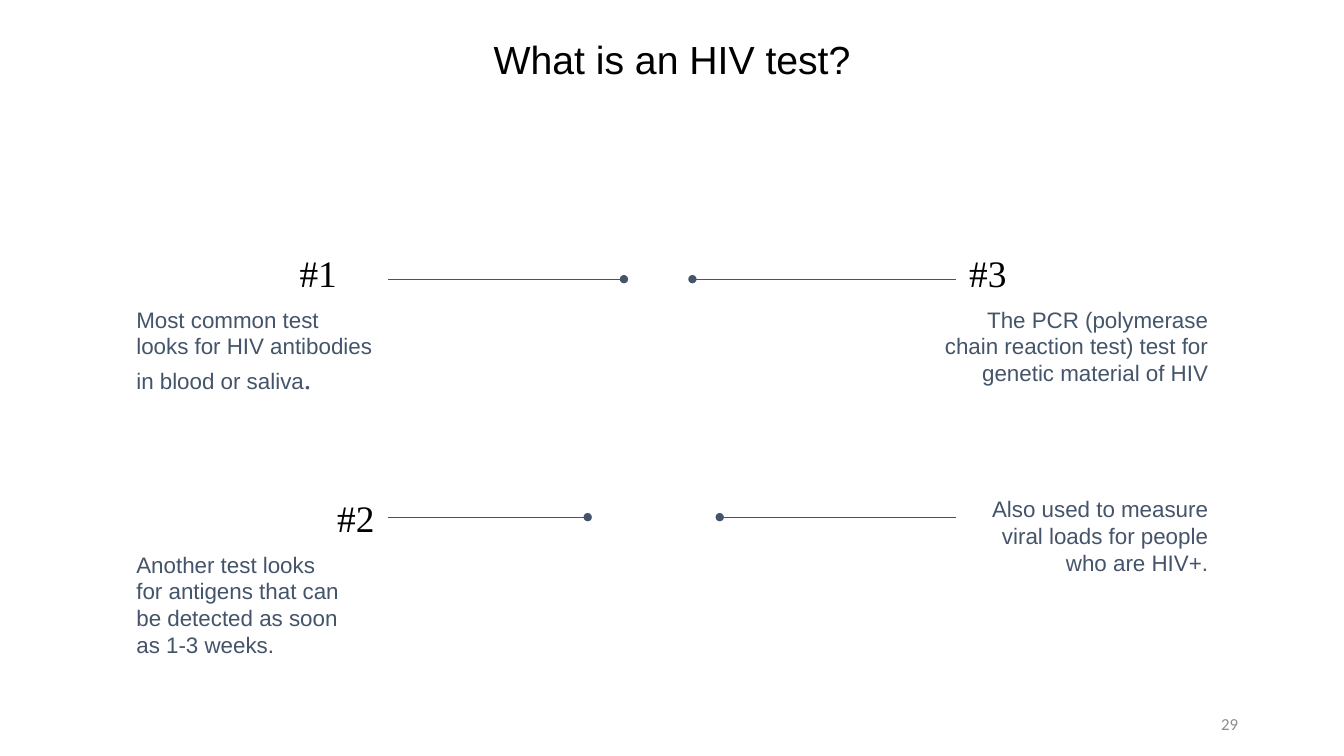
from lxml import etree
from pptx import Presentation
from pptx.dml.color import RGBColor
from pptx.enum.shapes import MSO_CONNECTOR
from pptx.enum.text import MSO_ANCHOR, MSO_AUTO_SIZE, PP_ALIGN
from pptx.oxml.ns import qn
from pptx.util import Pt

LEFT, CENTER, RIGHT = PP_ALIGN.LEFT, PP_ALIGN.CENTER, PP_ALIGN.RIGHT
TOP, MIDDLE = MSO_ANCHOR.TOP, MSO_ANCHOR.MIDDLE
NO_FIT = MSO_AUTO_SIZE.NONE
STRAIGHT = MSO_CONNECTOR.STRAIGHT

BLACK = RGBColor(0x00, 0x00, 0x00)
SLATE = RGBColor(0x44, 0x54, 0x6A)
GRAY = RGBColor(0x8C, 0x8C, 0x8C)

INSET = 9.6
TITLE_FONT = {"name": "Arial", "size": Pt(28), "color": BLACK}
BODY_FONT = {"name": "Arial", "size": Pt(16), "color": SLATE}
STOP_FONT = {"name": "Times New Roman", "size": Pt(21.3), "color": SLATE}
LABEL_FONT = {"name": "Times New Roman", "size": Pt(26.7), "color": BLACK}
NUMBER_FONT = {"name": "Calibri", "size": Pt(12), "color": GRAY}

LEFT_EDGE, RIGHT_EDGE = 87.8, 872.6      # outer edges of the texts
LEFT_RULE, RIGHT_RULE = 277.2, 682.6     # outer ends of the rules


def fill_text(shape, spans, align=LEFT, anchor=TOP, insets=(INSET,) * 4):
    """Write one paragraph of (text, font) spans; insets are left, top, right, bottom."""
    frame = shape.text_frame
    left, top, right, bottom = (Pt(length) for length in insets)
    formats = {
        "word_wrap": True, "auto_size": NO_FIT, "vertical_anchor": anchor,
        "margin_left": left, "margin_top": top,
        "margin_right": right, "margin_bottom": bottom,
    }
    for name, value in formats.items():
        setattr(frame, name, value)
    para = frame.paragraphs[0]
    para.alignment = align
    for text, font in spans:
        span = para.add_run()
        span.text = text
        for name, value in font.items():
            if name == "color":
                span.font.color.rgb = value
            else:
                setattr(span.font, name, value)
    return para


def add_text(page, box, spans, **layout):
    shape = page.shapes.add_textbox(*(Pt(length) for length in box))
    fill_text(shape, spans, **layout)


def add_title(page, box, text):
    title = page.shapes.title
    for name, length in zip(("left", "top", "width", "height"), box):
        setattr(title, name, Pt(length))
    para = fill_text(title, [(text, TITLE_FONT)], align=CENTER, insets=(0,) * 4)
    para.line_spacing = 0.9


def add_rule(page, outer_x, dot_x, y):
    """Draw a thin rule that ends in a dot at dot_x."""
    rule = page.shapes.add_connector(STRAIGHT, Pt(outer_x), Pt(y), Pt(dot_x), Pt(y))
    rule.line.color.rgb = SLATE
    rule.line.width = Pt(0.75)
    outline = rule.line._get_or_add_ln()
    etree.SubElement(outline, qn("a:tailEnd"), type="oval")
    etree.SubElement(outline.getparent(), qn("a:effectLst"))


def add_left_test(page, rule_y, dot_x, label, label_box, label_gap, body_box, spans):
    """Label right-aligned, label_gap before the rule; left-aligned text below it."""
    top, width, height = label_box
    add_text(page, (LEFT_RULE - width, top, width, height), [(label, LABEL_FONT)],
             align=RIGHT, anchor=MIDDLE, insets=(0, INSET, label_gap, INSET))
    add_text(page, (LEFT_EDGE, *body_box), spans)
    add_rule(page, LEFT_RULE, dot_x, rule_y)


def add_right_test(page, rule_y, dot_x, label, label_box, body_box, spans):
    """Optional label after the rule, text aligned to the right edge."""
    if label:
        add_text(page, (RIGHT_RULE, *label_box), [(label, LABEL_FONT)], anchor=MIDDLE)
    top, width, height = body_box
    add_text(page, (RIGHT_EDGE - width, top, width, height), spans, align=RIGHT)
    add_rule(page, RIGHT_RULE, dot_x, rule_y)


def main():
    deck = Presentation()
    deck.slide_width, deck.slide_height = Pt(960), Pt(540)
    page = deck.slides.add_slide(deck.slide_layouts[5])

    add_title(page, (66, 28.8, 828, 104.4), "What is an HIV test?")

    # Upper row
    upper, lower = 199.4, 369.4
    add_left_test(page, upper, 445.7, "#1", (173.5, 72.7, 42.5), 36.5, (208.8, 189.4, 90.7),
                  [("Most common test looks for HIV antibodies in blood or saliva", BODY_FONT),
                   (".", STOP_FONT)])
    add_right_test(page, upper, 494.6, "#3", (173.5, 62.6, 42.5), (208.8, 215.3, 90.7),
                   [("The PCR (polymerase chain reaction test) test for genetic material of HIV",
                     BODY_FONT)])

    # Lower row
    add_left_test(page, lower, 419.8, "#2", (351.4, 57.6, 36), INSET, (383.8, 164.2, 90.7),
                  [("Another test looks for antigens that can be detected as soon as 1-3 weeks.",
                    BODY_FONT)])
    add_right_test(page, lower, 514.1, None, None, (344.2, 189.4, 90.7),
                   [("Also used to measure viral loads for people who are HIV+.", BODY_FONT)])

    # Page number
    add_text(page, (678, 500.4, 216, 28.8), [("29", NUMBER_FONT)], align=RIGHT)

    deck.save("out.pptx")


if __name__ == "__main__":
    main()
